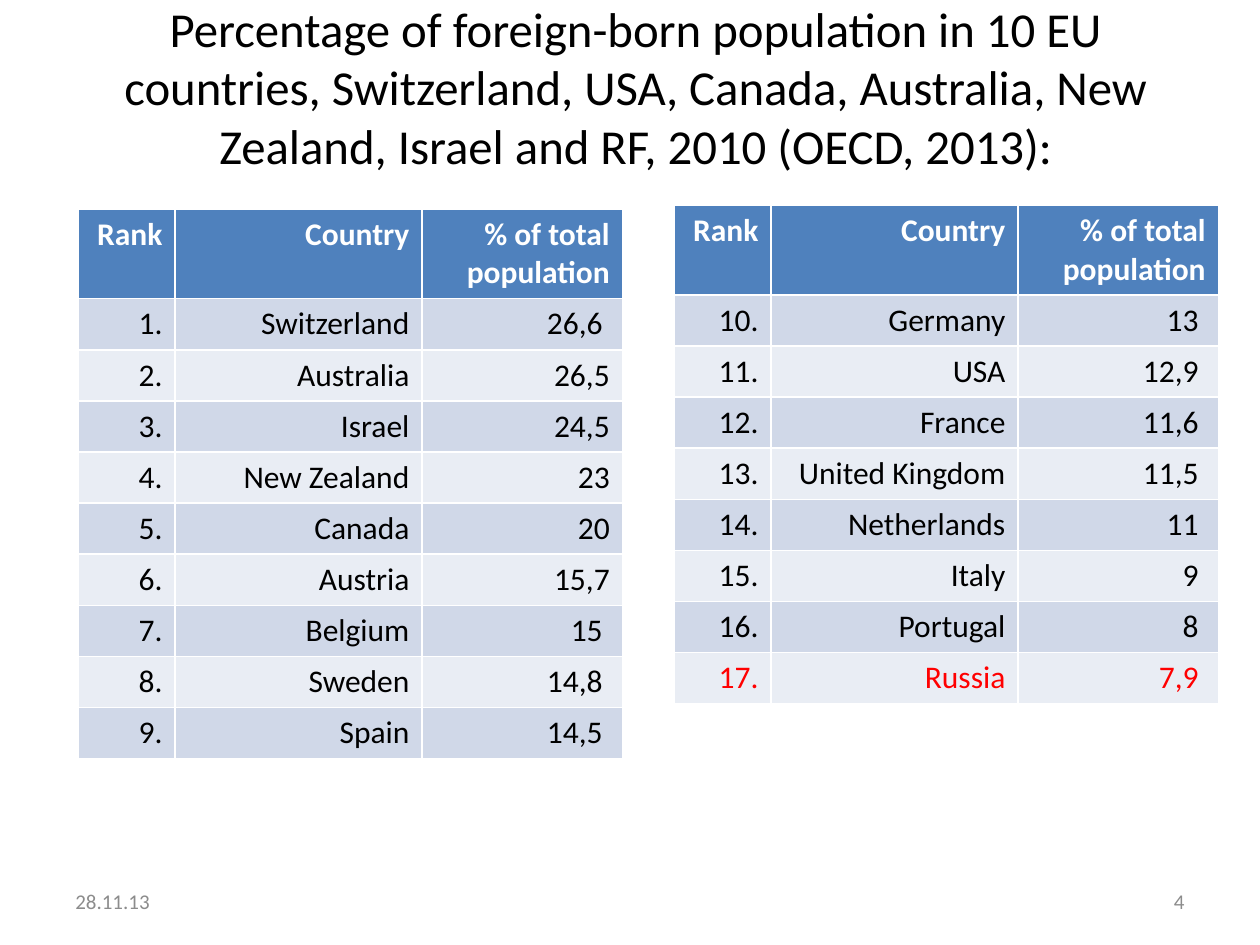
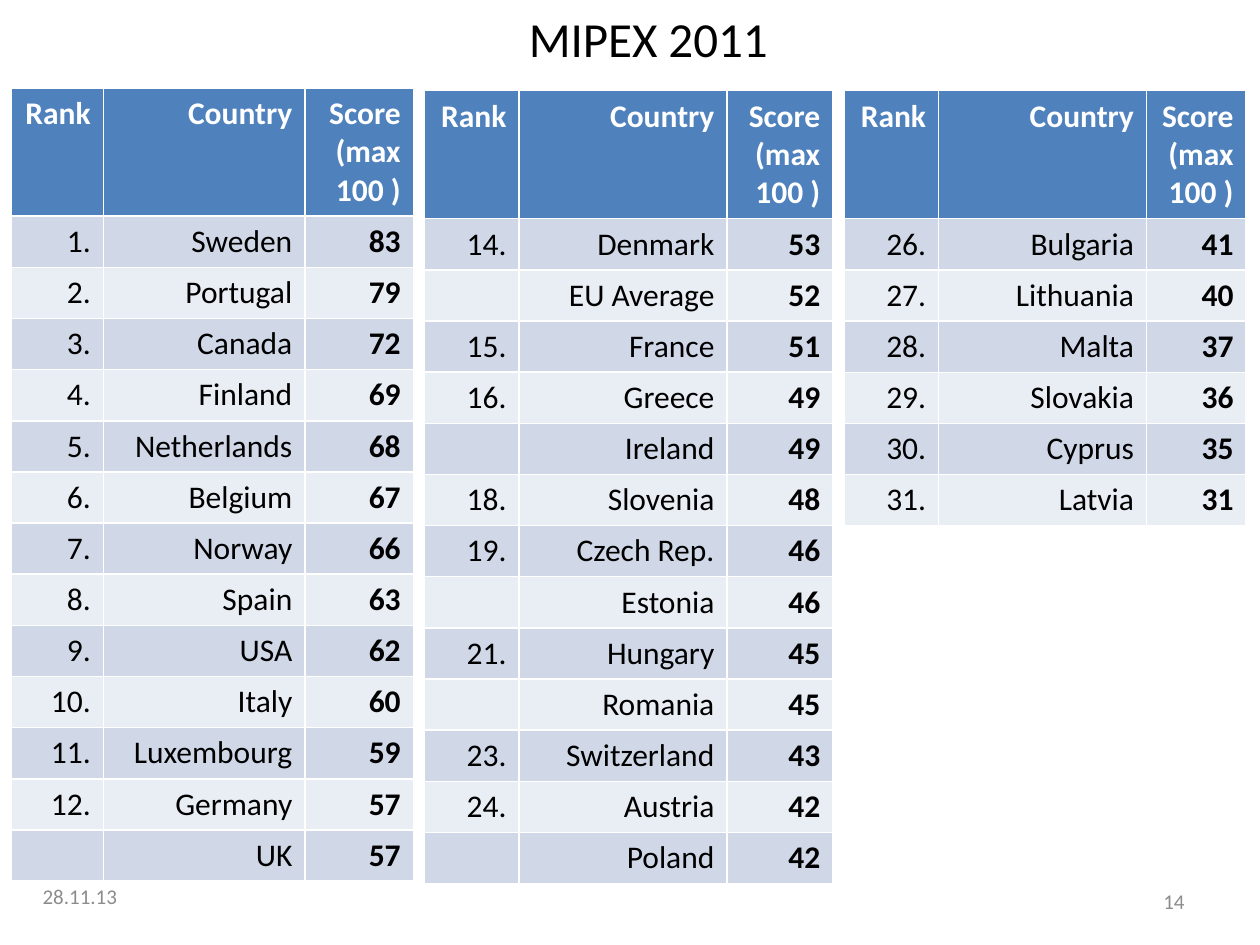
from dataclasses import dataclass

from pptx import Presentation
from pptx.dml.color import RGBColor
from pptx.enum.text import MSO_ANCHOR, PP_ALIGN
from pptx.util import Inches, Pt

FONT = "Calibri"
BLACK, WHITE, RED, GREY = "000000", "FFFFFF", "FF0000", "8C8C8C"
HEADER_FILL = "4F81BD"
BAND_FILLS = ("D0D8E8", "E9EDF4")
TITLE_ONLY = 5
DATE = "28.11.13"

SHARE_HEADER = ("Rank", "Country", "% of total population")
SHARE_COLUMNS = (0.77, 1.96, 1.59)
SCORE_HEADER = ("Rank", "Country", "Score (max 100 )")


@dataclass(frozen=True)
class Box:
    left: float
    top: float
    width: float
    height: float

    def lengths(self) -> tuple:
        return tuple(Inches(n) for n in (self.left, self.top, self.width, self.height))


@dataclass(frozen=True)
class Ranking:
    left: float
    top: float
    height: float
    header_height: float
    columns: tuple[float, ...]
    header: tuple[str, ...]
    rows: tuple[tuple[str, str, str], ...]
    bold_values: bool = False
    highlighted: str = ""


@dataclass(frozen=True)
class RankingSlide:
    title: str
    title_box: Box
    title_size: float
    title_anchor: MSO_ANCHOR
    title_bottom_inset: float
    rankings: tuple[Ranking, ...]
    date_box: Box
    number: str


def rgb(value: str) -> RGBColor:
    return RGBColor.from_string(value)


def write(frame, text: str, size: float, color: str, align: PP_ALIGN,
          bold: bool = False) -> None:
    paragraph = frame.paragraphs[0]
    paragraph.alignment = align
    run = paragraph.add_run()
    run.text = text
    run.font.name = FONT
    run.font.size = Pt(size)
    run.font.bold = bold
    run.font.color.rgb = rgb(color)


def add_title(slide, content: RankingSlide) -> None:
    title = slide.shapes.title
    title.left, title.top, title.width, title.height = content.title_box.lengths()
    frame = title.text_frame
    frame.word_wrap = True
    frame.vertical_anchor = content.title_anchor
    frame.margin_bottom = Inches(content.title_bottom_inset)
    write(frame, content.title, content.title_size, BLACK, PP_ALIGN.CENTER)


def add_footer(slide, box: Box, text: str, align: PP_ALIGN) -> None:
    frame = slide.shapes.add_textbox(*box.lengths()).text_frame
    frame.word_wrap = True
    frame.vertical_anchor = MSO_ANCHOR.MIDDLE
    write(frame, text, 12, GREY, align)


def fill_cell(cell, text: str, fill: str, color: str, bold: bool) -> None:
    cell.fill.solid()
    cell.fill.fore_color.rgb = rgb(fill)
    if text:
        write(cell.text_frame, text, 18, color, PP_ALIGN.RIGHT, bold)


def add_ranking(slide, ranking: Ranking) -> None:
    """Draw a banded table whose body rows share the height below the header."""
    box = Box(ranking.left, ranking.top, sum(ranking.columns), ranking.height)
    table = slide.shapes.add_table(
        len(ranking.rows) + 1, len(ranking.columns), *box.lengths()).table
    for column, width in zip(table.columns, ranking.columns):
        column.width = Inches(width)
    body_height = (ranking.height - ranking.header_height) / len(ranking.rows)
    for row in table.rows:
        row.height = Inches(body_height)
    table.rows[0].height = Inches(ranking.header_height)

    for c, label in enumerate(ranking.header):
        fill_cell(table.cell(0, c), label, HEADER_FILL, WHITE, True)
    for r, entry in enumerate(ranking.rows):
        color = RED if entry[1] == ranking.highlighted else BLACK
        for c, text in enumerate(entry):
            bold = ranking.bold_values and c == 2
            fill_cell(table.cell(r + 1, c), text, BAND_FILLS[r % 2], color, bold)


def add_ranking_slide(deck, content: RankingSlide) -> None:
    slide = deck.slides.add_slide(deck.slide_layouts[TITLE_ONLY])
    add_title(slide, content)
    for ranking in content.rankings:
        add_ranking(slide, ranking)
    add_footer(slide, content.date_box, DATE, PP_ALIGN.LEFT)
    add_footer(slide, Box(7.17, 6.95, 2.33, 0.4), content.number, PP_ALIGN.RIGHT)


FOREIGN_BORN = RankingSlide(
    title="Percentage of foreign-born population in 10 EU countries, Switzerland, "
          "USA, Canada, Australia, New Zealand, Israel and RF, 2010 (OECD, 2013):",
    title_box=Box(0.59, 0.29, 8.91, 1.25),
    title_size=27.9,
    title_anchor=MSO_ANCHOR.MIDDLE,
    title_bottom_inset=0.51,
    rankings=(
        Ranking(0.62, 1.66, 4.36, 0.71, SHARE_COLUMNS, SHARE_HEADER, (
            ("1.", "Switzerland", "26,6 "),
            ("2.", "Australia", "26,5"),
            ("3.", "Israel", "24,5"),
            ("4.", "New Zealand", "23"),
            ("5.", "Canada", "20"),
            ("6.", "Austria", "15,7"),
            ("7.", "Belgium", "15 "),
            ("8.", "Sweden", "14,8 "),
            ("9.", "Spain", "14,5 "),
        )),
        Ranking(5.35, 1.63, 3.95, 0.71, SHARE_COLUMNS, SHARE_HEADER, (
            ("10.", "Germany", "13 "),
            ("11.", "USA", "12,9 "),
            ("12.", "France", "11,6 "),
            ("13.", "United Kingdom", "11,5 "),
            ("14.", "Netherlands", "11 "),
            ("15.", "Italy", "9 "),
            ("16.", "Portugal", "8 "),
            ("17.", "Russia", "7,9 "),
        ), highlighted="Russia"),
    ),
    date_box=Box(0.5, 6.95, 2.33, 0.4),
    number="4",
)

MIPEX = RankingSlide(
    title="MIPEX 2011",
    title_box=Box(3.74, 0.02, 2.81, 0.57),
    title_size=28,
    title_anchor=MSO_ANCHOR.TOP,
    title_bottom_inset=0.05,
    rankings=(
        Ranking(0.09, 0.7, 6.27, 0.99, (0.73, 1.6, 0.86), SCORE_HEADER, (
            ("1.", "Sweden", "83"),
            ("2.", "Portugal", "79"),
            ("3.", "Canada", "72"),
            ("4.", "Finland", "69"),
            ("5.", "Netherlands", "68"),
            ("6.", "Belgium", "67"),
            ("7.", "Norway", "66"),
            ("8.", "Spain", "63"),
            ("9.", "USA", "62"),
            ("10.", "Italy", "60"),
            ("11.", "Luxembourg", "59"),
            ("12.", "Germany", "57"),
            ("", "UK", "57"),
        ), bold_values=True),
        Ranking(3.37, 0.72, 6.27, 0.99, (0.75, 1.65, 0.84), SCORE_HEADER, (
            ("14.", "Denmark", "53"),
            ("", "EU Average", "52"),
            ("15.", "France", "51"),
            ("16.", "Greece", "49"),
            ("", "Ireland", "49"),
            ("18.", "Slovenia", "48"),
            ("19.", "Czech Rep.", "46"),
            ("", "Estonia", "46"),
            ("21.", "Hungary", "45"),
            ("", "Romania", "45"),
            ("23.", "Switzerland", "43"),
            ("24.", "Austria", "42"),
            ("", "Poland", "42"),
        ), bold_values=True),
        Ranking(6.7, 0.72, 3.43, 0.99, (0.75, 1.65, 0.79), SCORE_HEADER, (
            ("26.", "Bulgaria", "41"),
            ("27.", "Lithuania", "40"),
            ("28.", "Malta", "37"),
            ("29.", "Slovakia", "36"),
            ("30.", "Cyprus", "35"),
            ("31.", "Latvia", "31"),
        ), bold_values=True),
    ),
    date_box=Box(0.24, 6.91, 2.33, 0.4),
    number="14",
)


def main() -> None:
    deck = Presentation()
    deck.slide_width, deck.slide_height = Inches(10), Inches(7.5)
    for content in (FOREIGN_BORN, MIPEX):
        add_ranking_slide(deck, content)
    deck.save("out.pptx")


if __name__ == "__main__":
    main()
